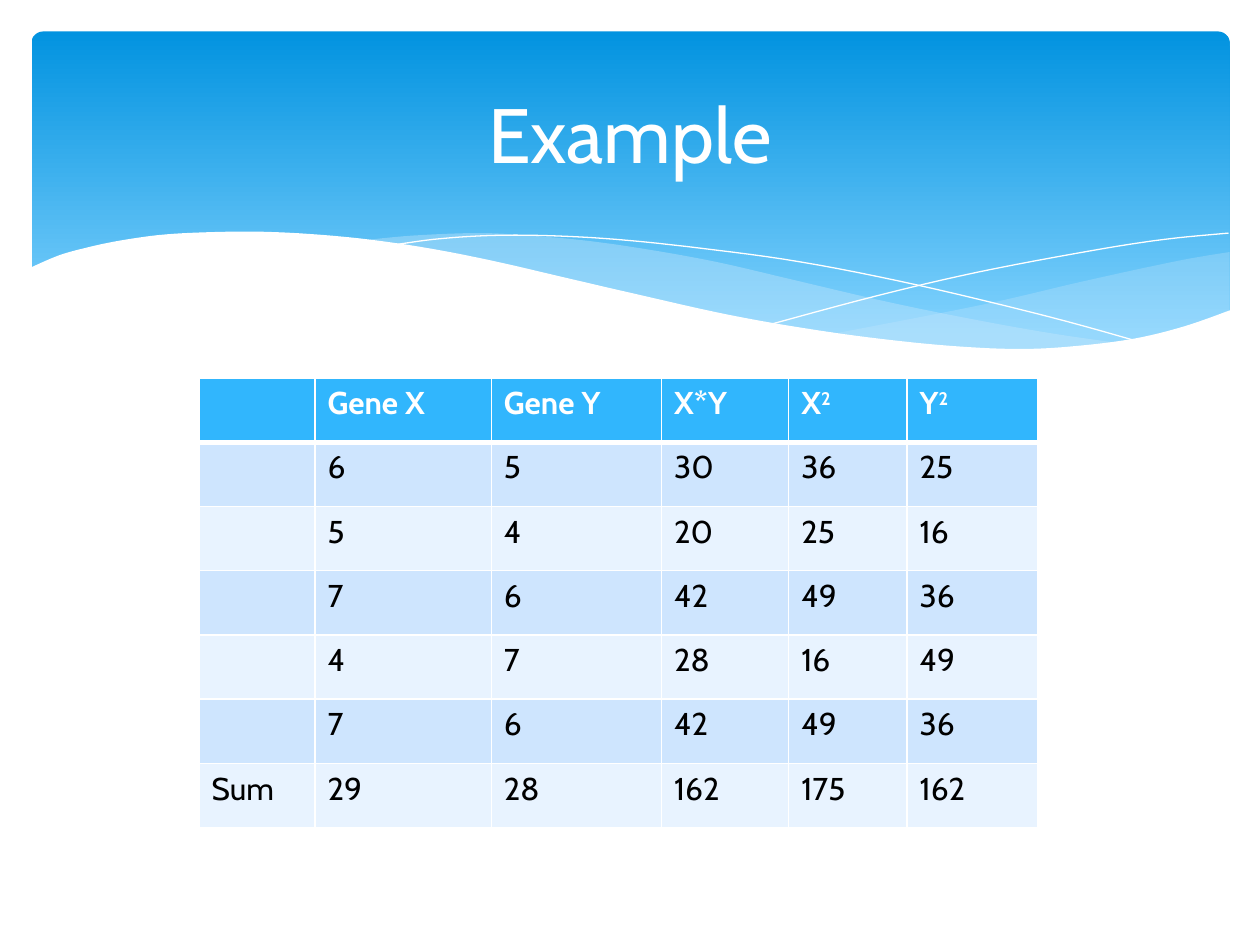
"""Build a slide with a wave banner and a table of gene products and sums."""
from dataclasses import dataclass

from lxml import etree
from pptx import Presentation
from pptx.dml.color import RGBColor
from pptx.enum.shapes import MSO_SHAPE
from pptx.enum.text import MSO_ANCHOR, PP_ALIGN
from pptx.oxml.ns import qn
from pptx.util import Inches, Pt

ROUNDED = MSO_SHAPE.ROUNDED_RECTANGLE
MIDDLE, TOP = MSO_ANCHOR.MIDDLE, MSO_ANCHOR.TOP
CENTER, LEFT = PP_ALIGN.CENTER, PP_ALIGN.LEFT
GRID = Inches(1)
FONT = "Cabin"
WHITE, BLACK, HEADER = "FFFFFF", "000000", "31B6FD"
BANDS = ("CEE5FE", "E8F3FF")
MIST = "C6E7FC"
STEPS = 6
Point = tuple[float, float]


@dataclass(frozen=True)
class Wave:
    """A shape whose smooth edges are joined by straight lines."""
    edges: tuple[tuple[Point, ...], ...]
    fill: str | None = None
    opacity: int = 100


WAVES = (
    Wave((((9.76, 2), (9.35, 2.07), (8.61, 2.23), (7.79, 2.42), (6.61, 2.65)),
          ((6.61, 2.65), (7.05, 2.71), (7.57, 2.76), (8.14, 2.78), (8.63, 2.75),
           (9.05, 2.69), (9.42, 2.59), (9.76, 2.47))), MIST, 29),
    Wave((((8.93, 2.73), (8.37, 2.65), (7.75, 2.54), (7.06, 2.4), (6.29, 2.22),
           (5.69, 2.08), (5.14, 1.98), (4.65, 1.91), (4.2, 1.87), (3.8, 1.85),
           (3.28, 1.87), (2.86, 1.91)),
          ((2.86, 1.91), (3.42, 1.99), (4.04, 2.11), (4.49, 2.22), (5.3, 2.4),
           (6.01, 2.55), (6.65, 2.66), (7.22, 2.74), (7.73, 2.77), (8.18, 2.78),
           (8.57, 2.77), (8.93, 2.73))), MIST, 40),
    Wave((((3.09, 1.95), (3.44, 1.9), (3.87, 1.87), (4.33, 1.87), (4.89, 1.9),
           (5.56, 1.97), (6.36, 2.08), (7.27, 2.26), (8.31, 2.51), (9.07, 2.72)),)),
    Wave((((6.13, 2.57), (6.95, 2.35), (7.76, 2.16), (8.66, 1.99), (9.24, 1.9),
           (9.75, 1.85)),)),
    Wave((((9.77, 2.46), (9.4, 2.59), (8.99, 2.69), (8.5, 2.75), (8.09, 2.77),
           (7.61, 2.75), (7.08, 2.7), (6.48, 2.62), (5.79, 2.5), (5.03, 2.33),
           (4.47, 2.2), (3.91, 2.07), (3.4, 1.97), (2.92, 1.9), (2.5, 1.86),
           (2.11, 1.84), (1.77, 1.84), (1.32, 1.86), (0.95, 1.91), (0.67, 1.97),
           (0.46, 2.03), (0.23, 2.13)), ((0.23, 3.29), (9.77, 3.29))), WHITE),
)

HEADINGS = ["", "Gene X", "Gene Y", "X*Y", "X^2", "Y^2"]
GENE_PAIRS = ((6, 5), (5, 4), (7, 6), (4, 7), (7, 6))
COLUMN_WIDTHS = (0.92, 1.4, 1.35, 1.01, 0.94, 1.04)
ROW_HEIGHT = 0.51


def units(*lengths: float) -> list[int]:
    """Turn grid units into slide lengths."""
    return [round(length * GRID) for length in lengths]


def color(hex_code: str) -> RGBColor:
    """Turn a hex string into a colour."""
    return RGBColor.from_string(hex_code)


def smooth(knots: tuple[Point, ...]) -> list[Point]:
    """Sample a Catmull-Rom curve through the knots."""
    if len(knots) < 3:
        return list(knots)
    padded = (knots[0], *knots, knots[-1])
    curve = [knots[0]]
    for before, start, end, after in zip(padded, padded[1:], padded[2:], padded[3:]):
        for step in range(1, STEPS + 1):
            t = step / STEPS
            curve.append(tuple(
                (2 * b + (c - a) * t + (2 * a - 5 * b + 4 * c - d) * t ** 2
                 + (3 * b - a - 3 * c + d) * t ** 3) / 2
                for a, b, c, d in zip(before, start, end, after)))
    return curve


def draw_banner(shapes) -> None:
    """Draw the rounded gradient behind the title."""
    banner = shapes.add_shape(ROUNDED, *units(0.25, 0.25, 9.51, 2.7))
    banner.shadow.inherit = False
    banner.adjustments[0] = 0.034
    banner.line.fill.background()
    banner.fill.gradient()
    banner.fill.gradient_angle = 270
    for stop, position, shade in zip(banner.fill.gradient_stops, (0, 0.9),
                                     ("0293E0", "83D3FE")):
        stop.position = position
        stop.color.rgb = color(shade)


def draw_wave(shapes, wave: Wave) -> None:
    """Draw a filled wave, or a white hairline when it has no fill."""
    outline = [units(*point) for edge in wave.edges for point in smooth(edge)]
    builder = shapes.build_freeform(*outline[0])
    builder.add_line_segments(outline[1:], close=wave.fill is not None)
    shape = builder.convert_to_shape()
    shape.shadow.inherit = False
    if wave.fill is None:
        shape.fill.background()
        shape.line.color.rgb = color(WHITE)
        shape.line.width = Pt(0)
        return
    shape.line.fill.background()
    shape.fill.solid()
    shape.fill.fore_color.rgb = color(wave.fill)
    if wave.opacity < 100:
        tint = shape.element.spPr.find(f"{qn('a:solidFill')}/{qn('a:srgbClr')}")
        etree.SubElement(tint, qn("a:alpha"), val=str(wave.opacity * 1000))


def write(frame, text: str, *, size: float, shade: str, bold: bool = False,
          align=LEFT, anchor=TOP) -> None:
    """Write one paragraph, raising whatever follows a caret."""
    frame.word_wrap = True
    frame.vertical_anchor = anchor
    paragraph = frame.paragraphs[0]
    paragraph.alignment = align
    base, _, exponent = text.partition("^")
    for part, raised in ((base, False), (exponent, True)):
        if not part:
            continue
        run = paragraph.add_run()
        run.text = part
        run.font.name, run.font.size, run.font.bold = FONT, Pt(size), bold
        run.font.color.rgb = color(shade)
        if raised:
            run._r.get_or_add_rPr().set("baseline", "30000")


def format_cell(cell, fill: str, bottom: float) -> None:
    """Give a cell its fill and white borders."""
    properties = cell._tc.get_or_add_tcPr()
    for side, width in (("L", 1), ("R", 1), ("T", 1), ("B", bottom)):
        border = etree.SubElement(properties, qn(f"a:ln{side}"), w=str(Pt(width)))
        paint = etree.SubElement(border, qn("a:solidFill"))
        etree.SubElement(paint, qn("a:srgbClr"), val=WHITE)
    cell.fill.solid()
    cell.fill.fore_color.rgb = color(fill)


def gene_rows() -> list[list[str]]:
    """Work out the products, squares and sums of the gene pairs."""
    values = [(x, y, x * y, x * x, y * y) for x, y in GENE_PAIRS]
    sums = [sum(column) for column in zip(*values)]
    body = [["", *map(str, row)] for row in values]
    return [HEADINGS, *body, ["Sum", *map(str, sums)]]


def draw_table(shapes) -> None:
    """Draw the table of genes."""
    rows = gene_rows()
    table = shapes.add_table(len(rows), len(HEADINGS), *units(
        1.58, 3, sum(COLUMN_WIDTHS), ROW_HEIGHT * len(rows))).table
    for column, width in zip(table.columns, COLUMN_WIDTHS):
        column.width, = units(width)
    for index, row in enumerate(rows):
        heading = index == 0
        table.rows[index].height, = units(ROW_HEIGHT)
        for cell, text in zip(table.rows[index].cells, row):
            format_cell(cell, HEADER if heading else BANDS[(index - 1) % 2],
                        3 if heading else 1)
            write(cell.text_frame, text, size=18, bold=heading,
                  shade=WHITE if heading else BLACK)


def main() -> None:
    """Build and save the slide."""
    deck = Presentation()
    deck.slide_width, deck.slide_height = units(10, 7.5)
    slide = deck.slides.add_slide(deck.slide_layouts[5])
    draw_banner(slide.shapes)
    for wave in WAVES:
        draw_wave(slide.shapes, wave)
    draw_table(slide.shapes)
    title = slide.shapes.title
    title.left, title.top, title.width, title.height = units(0.5, 0.37, 9, 1.37)
    write(title.text_frame, "Example", size=44, shade=WHITE, align=CENTER, anchor=MIDDLE)
    title.element.getparent().append(title.element)
    deck.save("out.pptx")


if __name__ == "__main__":
    main()
